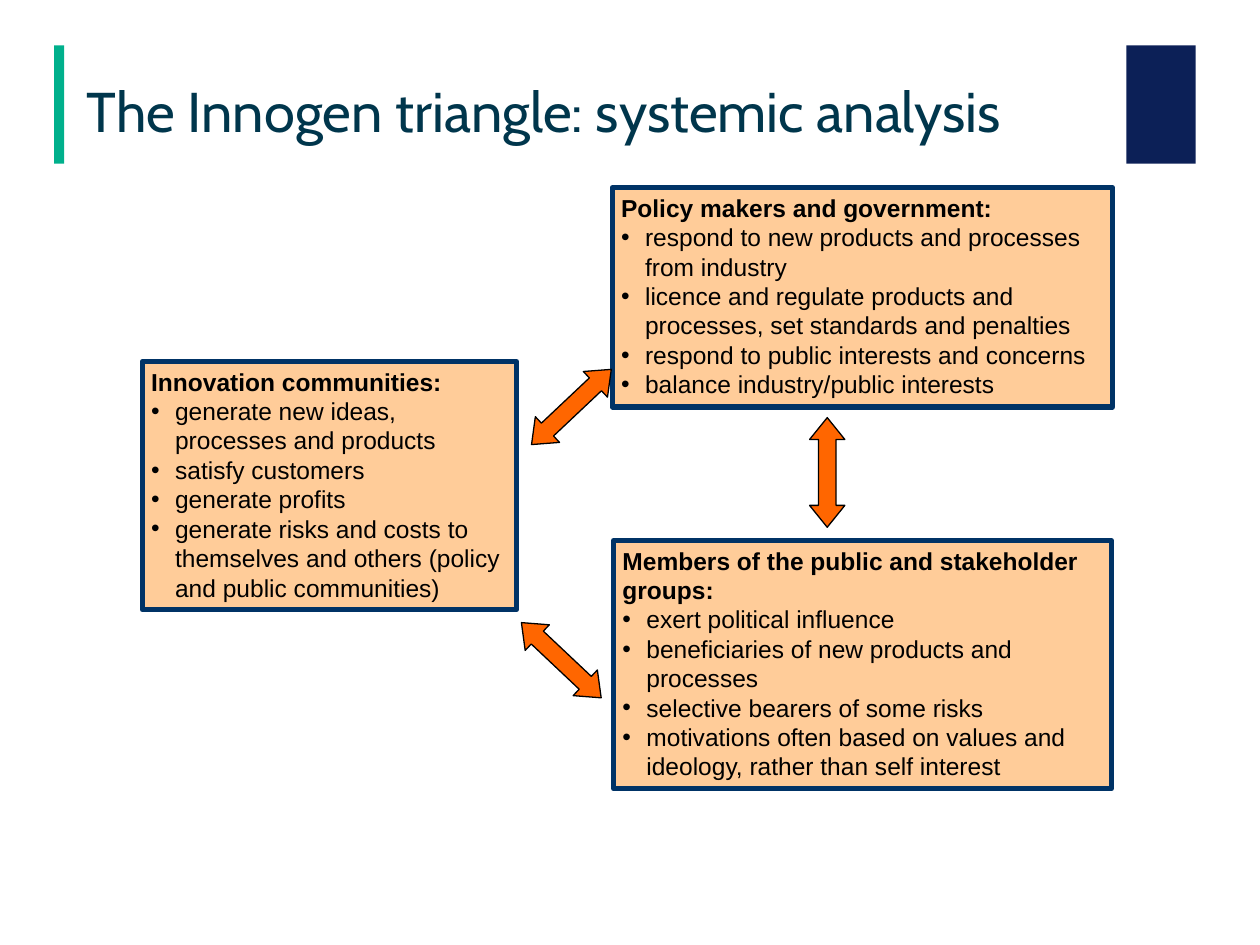
from pptx import Presentation
from pptx.dml.color import RGBColor
from pptx.enum.shapes import MSO_SHAPE as Shape
from pptx.enum.text import MSO_ANCHOR as Anchor, PP_ALIGN as Align
from pptx.oxml.ns import qn
from pptx.util import Inches, Pt
from lxml.etree import SubElement

NAVY = RGBColor(0x0C, 0x20, 0x57)
GREEN = RGBColor(0x00, 0xB0, 0x8C)
PEACH = RGBColor(0xFF, 0xCC, 0x99)
BORDER = RGBColor(0x00, 0x33, 0x66)
ORANGE = RGBColor(0xFF, 0x66, 0x00)
BLACK = RGBColor(0x00, 0x00, 0x00)
TITLE = RGBColor(0x00, 0x36, 0x4C)

ACTORS = [
    ((4.86, 1.49, 3.97, 1.74), ["Policy makers and government:"], [
        "respond to new products and processes from industry",
        "licence and regulate products and processes, set standards and penalties",
        "respond to public interests and concerns",
        "balance industry/public interests"]),
    ((4.87, 4.29, 3.95, 1.97), ["Members of the public and stakeholder", "groups:"], [
        "exert political influence",
        "beneficiaries of new products and processes",
        "selective bearers of some risks",
        "motivations often based on values and ideology, rather than self interest"]),
    ((1.13, 2.87, 2.97, 1.97), ["Innovation communities:"], [
        "generate new ideas, processes and products",
        "satisfy customers",
        "generate profits",
        "generate risks and costs to themselves and others (policy and public communities)"]),
]
ARROWS = [(6.13, 3.61, 90), (4.1, 3.09, 136.7), (4.02, 5.1, 43.3)]


class TrianglePage:
    """Draws the parts of the triangle diagram on one slide in a shared style."""

    def __init__(self, page):
        self.page = page
        self.body_font, self.body_size = "Arial", Pt(14)
        self.title_font, self.title_size = "Cabin", Pt(32)
        self.indent = Inches(0.19)

    def block(self, place, fill, line=None, width=0, kind=Shape.RECTANGLE):
        shape = self.page.shapes.add_shape(kind, *map(Inches, place))
        shape.shadow.inherit = False
        shape.fill.solid()
        shape.fill.fore_color.rgb = fill
        if line is None:
            shape.line.fill.background()
        else:
            shape.line.color.rgb = line
            shape.line.width = Pt(width)
        return shape

    def span(self, para, text, font, size, color, bold=False):
        span = para.add_run()
        span.text = text
        span.font.name, span.font.size, span.font.bold = font, size, bold
        span.font.color.rgb = color

    def title(self, place, text):
        box = self.page.shapes.add_textbox(*map(Inches, place))
        frame = box.text_frame
        frame.word_wrap = True
        frame.vertical_anchor = Anchor.MIDDLE
        self.span(frame.paragraphs[0], text, self.title_font, self.title_size, TITLE)

    def actor(self, place, heading, points):
        frame = self.block(place, PEACH, BORDER, 3).text_frame
        frame.word_wrap = True
        frame.vertical_anchor = Anchor.TOP
        frame.margin_left = frame.margin_right = Inches(0.07)
        frame.margin_top = frame.margin_bottom = Inches(0.04)
        for index, text in enumerate(heading + points):
            para = frame.paragraphs[0] if index == 0 else frame.add_paragraph()
            para.alignment = Align.LEFT
            is_heading = index < len(heading)
            self.hang(para, bullet=not is_heading)
            self.span(para, text, self.body_font, self.body_size, BLACK, is_heading)

    def hang(self, para, bullet):
        props = para._p.get_or_add_pPr()
        props.set("marL", str(self.indent))
        props.set("indent", str(-self.indent))
        if bullet:
            SubElement(props, qn("a:buFont"), typeface=self.body_font)
            SubElement(props, qn("a:buChar"), char="•")

    def arrow(self, left, top, angle):
        place = (left, top, 0.87, 0.28)
        arrow = self.block(place, ORANGE, BLACK, 0.75, Shape.LEFT_RIGHT_ARROW)
        arrow.adjustments[0] = 0.5
        arrow.adjustments[1] = 0.62
        arrow.rotation = angle


def main():
    deck = Presentation()
    deck.slide_width, deck.slide_height = Inches(10), Inches(7.5)
    triangle = TrianglePage(deck.slides.add_slide(deck.slide_layouts[6]))
    triangle.block((8.94, 0.36, 0.55, 0.94), NAVY)
    triangle.block((0.43, 0.36, 0.08, 0.94), GREEN)
    for actor in ACTORS:
        triangle.actor(*actor)
    for arrow in ARROWS:
        triangle.arrow(*arrow)
    triangle.title((0.59, 0.44, 8.27, 0.87), "The Innogen triangle: systemic analysis")
    deck.save("out.pptx")


if __name__ == "__main__":
    main()
